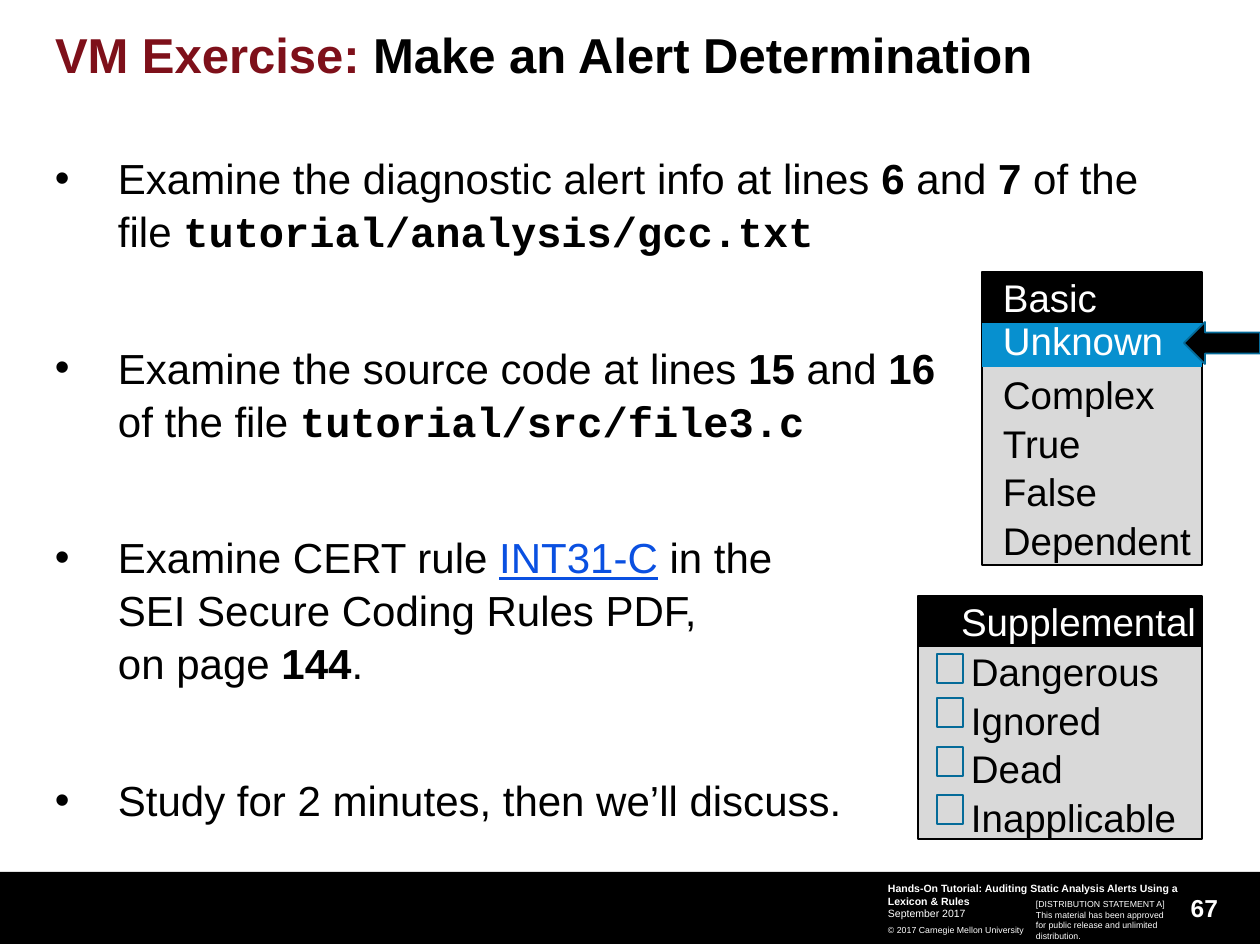
from pptx import Presentation
from pptx.dml.color import RGBColor
from pptx.enum.shapes import MSO_SHAPE
from pptx.enum.text import MSO_ANCHOR, PP_ALIGN
from pptx.oxml import parse_xml
from pptx.oxml.ns import nsdecls
from pptx.util import Pt

PX = 914400 / 126
BLACK = RGBColor(0x00, 0x00, 0x00)
WHITE = RGBColor(0xFF, 0xFF, 0xFF)
RED = RGBColor(0x7E, 0x10, 0x1A)
GREY = RGBColor(0xD9, 0xD9, 0xD9)
BLUE = RGBColor(0x07, 0x90, 0xCF)
TEAL = RGBColor(0x05, 0x6B, 0x99)
LINK = RGBColor(0x0A, 0x50, 0xE1)

STEPS = [
    [("Examine the diagnostic alert info at lines ", ""), ("6", "bold"),
     (" and ", ""), ("7", "bold"), (" of the file ", ""),
     ("tutorial/analysis/gcc.txt", "code")],
    [("Examine the source code at lines ", ""), ("15", "bold"),
     (" and ", ""), ("16", "bold"), ("\nof the file ", ""),
     ("tutorial/src/file3.c", "code")],
    [("Examine CERT rule ", ""), ("INT31-C", "link"),
     (" in the\nSEI Secure Coding Rules PDF,\non page ", ""),
     ("144", "bold"), (".", "")],
    [("Study for 2 minutes, then we’ll discuss.", "")],
]


def emu(*px):
    return [round(n * PX) for n in px]


def style(para, size, color, bold=False, space=1.0):
    para.line_spacing = space
    font = para.font
    font.name, font.size, font.bold = "Arial", Pt(size), bold
    font.color.rgb = color


def set_frame(frame, left=0, top=0):
    frame.word_wrap = True
    frame.vertical_anchor = MSO_ANCHOR.TOP
    frame.margin_left, frame.margin_top = emu(left, top)
    frame.margin_right = frame.margin_bottom = 0


def add_text(slide, box, lines):
    frame = slide.shapes.add_textbox(*emu(*box)).text_frame
    set_frame(frame)
    for i, (text, size, bold, space) in enumerate(lines):
        para = frame.add_paragraph() if i else frame.paragraphs[0]
        para.text = text
        style(para, size, WHITE, bold, space)
    return frame


def add_box(slide, box, fill=None, line=None, width=0.75, kind=MSO_SHAPE.RECTANGLE):
    shape = slide.shapes.add_shape(kind, *emu(*box))
    shape.shadow.inherit = False
    if fill is None:
        shape.fill.background()
    else:
        shape.fill.solid()
        shape.fill.fore_color.rgb = fill
    if line is None:
        shape.line.fill.background()
    else:
        shape.line.color.rgb = line
        shape.line.width = Pt(width)
    return shape


def fill_list(shape, words, color, left, top=0, space=1.05):
    frame = shape.text_frame
    set_frame(frame, left, top)
    for i, word in enumerate(words):
        para = frame.add_paragraph() if i else frame.paragraphs[0]
        para.text = word
        para.alignment = PP_ALIGN.LEFT
        style(para, 22, color, space=space)


def add_title(slide):
    title = slide.shapes.title
    title.left, title.top, title.width, title.height = emu(55, 31, 1180, 92)
    set_frame(title.text_frame)
    para = title.text_frame.paragraphs[0]
    para.alignment = PP_ALIGN.LEFT
    style(para, 28, BLACK, True, 0.9)
    lead = para.add_run()
    lead.text = "VM Exercise:"
    lead.font.color.rgb = RED
    para.add_run().text = " Make an Alert Determination"


def add_bullet(para):
    props = para._p.get_or_add_pPr()
    indent = emu(63)[0]
    props.set("marL", str(indent))
    props.set("indent", str(-indent))
    props.append(parse_xml(f'<a:buFont {nsdecls("a")} typeface="Arial"/>'))
    props.append(parse_xml(f'<a:buChar {nsdecls("a")} char="•"/>'))


def add_run(para, text, kind):
    for i, part in enumerate(text.split("\n")):
        if i:
            para.add_line_break()
        if not part:
            continue
        run = para.add_run()
        run.text = part
        if kind in ("bold", "code"):
            run.font.bold = True
        if kind == "code":
            run.font.name = "Courier New"
        if kind == "link":
            run.font.underline = True
            run.font.color.rgb = LINK


def add_steps(slide):
    frame = slide.shapes.add_textbox(*emu(55, 150, 1147, 690)).text_frame
    set_frame(frame)
    for i, step in enumerate(STEPS):
        para = frame.add_paragraph() if i else frame.paragraphs[0]
        add_bullet(para)
        style(para, 24, BLACK, space=1.05)
        if i:
            para.space_before = Pt(48)
        for text, kind in step:
            add_run(para, text, kind)


def add_basic(slide):
    rest = add_box(slide, (982, 322, 220, 243), GREY, BLACK)
    fill_list(rest, ["Complex", "True", "False", "Dependent"], BLACK, 21, 47)
    pick = add_box(slide, (982, 322, 220, 45), BLUE)
    fill_list(pick, ["Unknown"], WHITE, 21, space=0.9)
    add_box(slide, (1184, 322, 76, 42), BLACK, TEAL, 1, MSO_SHAPE.LEFT_ARROW)
    head = add_box(slide, (982, 272, 220, 50), BLACK, BLACK)
    fill_list(head, ["Basic"], WHITE, 21)


def add_extra(slide):
    rest = add_box(slide, (918, 646, 284, 193), GREY, BLACK)
    fill_list(rest, ["Dangerous", "Ignored", "Dead", "Inapplicable"], BLACK, 53)
    for top in (654, 698, 747, 795):
        add_box(slide, (937, top, 26, 29), line=TEAL, width=1)
    head = add_box(slide, (918, 596, 284, 50), BLACK, BLACK)
    fill_list(head, ["Supplemental"], WHITE, 43)


def add_footer(slide):
    add_box(slide, (0, 872, 1260, 72), BLACK)
    number = add_text(slide, (1148, 882, 70, 51), [("67", 14, True, 1.0)])
    number.vertical_anchor = MSO_ANCHOR.MIDDLE
    number.paragraphs[0].alignment = PP_ALIGN.RIGHT
    add_text(slide, (888, 882, 292, 54), [
        ("Hands-On Tutorial: Auditing Static Analysis Alerts Using a Lexicon & Rules",
         6, True, 1.0),
        ("September 2017", 6, False, 1.0),
        ("© 2017 Carnegie Mellon University", 5, False, 1.5),
    ])
    add_text(slide, (1036, 899, 139, 43), [
        ("[DISTRIBUTION STATEMENT A] This material has been approved for "
         "public release and unlimited distribution.", 5, False, 1.0),
    ])


def main():
    deck = Presentation()
    deck.slide_width, deck.slide_height = emu(1260, 945)
    slide = deck.slides.add_slide(deck.slide_layouts[5])
    add_footer(slide)
    add_title(slide)
    add_steps(slide)
    add_extra(slide)
    add_basic(slide)
    deck.save("out.pptx")


if __name__ == "__main__":
    main()
